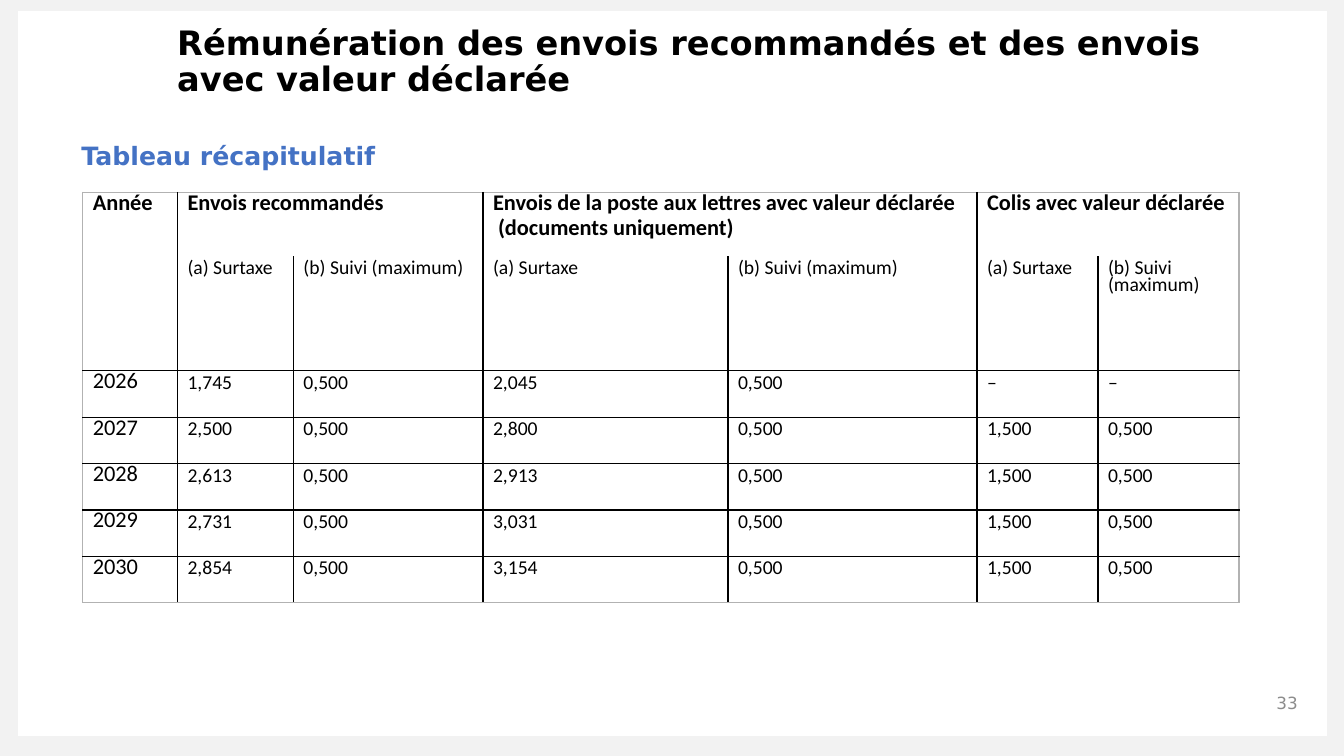
import pptx
import pptx.dml.color
import pptx.enum.shapes
import pptx.enum.text
import pptx.oxml
import pptx.oxml.ns
import pptx.util
from pptx.util import Inches

TITLE = "Rémunération des envois recommandés et des envois avec valeur déclarée"
WIDTHS = [0.94, 1.15, 1.88, 2.43, 2.47, 1.2, 1.4]
HEIGHTS = [0.63, 1.14] + [0.46] * 5
GROUPS = [
    "Envois recommandés",
    "Envois de la poste aux lettres avec valeur déclarée\n(documents uniquement)",
    "Colis avec valeur déclarée",
]
RATES = [
    ["2026", "1,745", "0,500", "2,045", "0,500", "–", "–"],
    ["2027", "2,500", "0,500", "2,800", "0,500", "1,500", "0,500"],
    ["2028", "2,613", "0,500", "2,913", "0,500", "1,500", "0,500"],
    ["2029", "2,731", "0,500", "3,031", "0,500", "1,500", "0,500"],
    ["2030", "2,854", "0,500", "3,154", "0,500", "1,500", "0,500"],
]
GRID = "000000"
FRAME = "B2B2B2"


def paint(hue):
    return pptx.dml.color.RGBColor.from_string(hue)


def style(para, size, face, hue, bold=False):
    for run in para.runs:
        font = run.font
        font.size = pptx.util.Pt(size)
        font.name = face
        font.bold = bold
        font.color.rgb = paint(hue)


def add_label(slide, text, box, size, hue, bold=False, middle=False):
    frame = slide.shapes.add_textbox(*map(Inches, box)).text_frame
    frame.word_wrap = True
    if middle:
        frame.vertical_anchor = pptx.enum.text.MSO_ANCHOR.MIDDLE
    frame.text = text
    para = frame.paragraphs[0]
    style(para, size, "DejaVu Sans", hue, bold)
    return para


def add_panel(slide, box, hue):
    panel = slide.shapes.add_shape(
        pptx.enum.shapes.MSO_SHAPE.RECTANGLE, *map(Inches, box))
    panel.shadow.inherit = False
    panel.fill.solid()
    panel.fill.fore_color.rgb = paint(hue)
    panel.line.fill.background()


def set_edge(cell, side, hue):
    """Draw one side of a cell; without a hue the side stays bare."""
    fill = "<a:noFill/>"
    if hue:
        fill = f'<a:solidFill><a:srgbClr val="{hue}"/></a:solidFill>'
    space = pptx.oxml.ns.nsdecls("a")
    edge = pptx.oxml.parse_xml(f'<a:ln{side} {space} w="12700">{fill}</a:ln{side}>')
    cell._tc.get_or_add_tcPr().append(edge)


def rule_cell(cell, row, col):
    """Grey outer frame, black grid, no line between the two header rows."""
    last_row, last_col = len(HEIGHTS) - 1, len(WIDTHS) - 1
    wide = row == 0 and col > 0
    right = col + 1 if wide and cell.is_merge_origin else col
    inner = wide and cell.is_spanned
    left_hue = FRAME if col == 0 else None if inner else GRID
    right_hue = FRAME if right == last_col else GRID
    top_hue = FRAME if row == 0 else GRID if row > 1 else None
    low_hue = FRAME if row == last_row else GRID if row else None
    if row == 0 and col == 0:
        low_hue = GRID
    for side, hue in zip("LRTB", (left_hue, right_hue, top_hue, low_hue)):
        set_edge(cell, side, hue)
    cell.fill.background()


def fill_cell(cell, text, size, bold=False):
    cell.margin_top = Inches(0.07)
    cell.margin_bottom = 0
    cell.text_frame.text = text
    for index, para in enumerate(cell.text_frame.paragraphs):
        para.line_spacing = pptx.util.Pt(12)
        para.space_after = pptx.util.Pt(3)
        if index:
            para.space_before = pptx.util.Pt(3)
            para._p.get_or_add_pPr().set("marL", str(Inches(0.05)))
        style(para, size, "Calibri", "000000", bold)


def add_rates(slide):
    table = slide.shapes.add_table(
        len(HEIGHTS), len(WIDTHS), Inches(0.82), Inches(1.91),
        Inches(sum(WIDTHS)), Inches(sum(HEIGHTS))).table
    table.first_row = table.horz_banding = False
    for col, width in zip(table.columns, WIDTHS):
        col.width = Inches(width)
    for row, height in zip(table.rows, HEIGHTS):
        row.height = Inches(height)

    table.cell(0, 0).merge(table.cell(1, 0))
    fill_cell(table.cell(0, 0), "Année", 16, True)
    for index, group in enumerate(GROUPS):
        col = 1 + 2 * index
        table.cell(0, col).merge(table.cell(0, col + 1))
        fill_cell(table.cell(0, col), group, 16, True)
        fill_cell(table.cell(1, col), "(a) Surtaxe", 14)
        fill_cell(table.cell(1, col + 1), "(b) Suivi (maximum)", 14)
    for row, rates in enumerate(RATES, 2):
        for col, rate in enumerate(rates):
            fill_cell(table.cell(row, col), rate, 14 if col else 16)
    for row in range(len(HEIGHTS)):
        for col in range(len(WIDTHS)):
            rule_cell(table.cell(row, col), row, col)


def main():
    deck = pptx.Presentation()
    deck.slide_width, deck.slide_height = Inches(13.33), Inches(7.5)
    slide = deck.slides.add_slide(deck.slide_layouts[6])
    add_panel(slide, (0, 0, 13.33, 7.5), "F2F2F2")
    add_panel(slide, (0.18, 0.11, 12.98, 7.19), "FFFFFF")
    add_label(slide, "Tableau récapitulatif", (0.71, 1.34, 11.54, 0.45),
              18, "4472C4", bold=True)
    number = add_label(slide, "33", (9.97, 6.77, 3, 0.4), 12, "8C8C8C", middle=True)
    number.alignment = pptx.enum.text.PP_ALIGN.RIGHT
    title = add_label(slide, TITLE, (1.66, 0.31, 11.06, 0.62),
                      24, "000000", bold=True, middle=True)
    title.line_spacing = 0.9
    add_rates(slide)
    deck.save("out.pptx")


if __name__ == "__main__":
    main()
